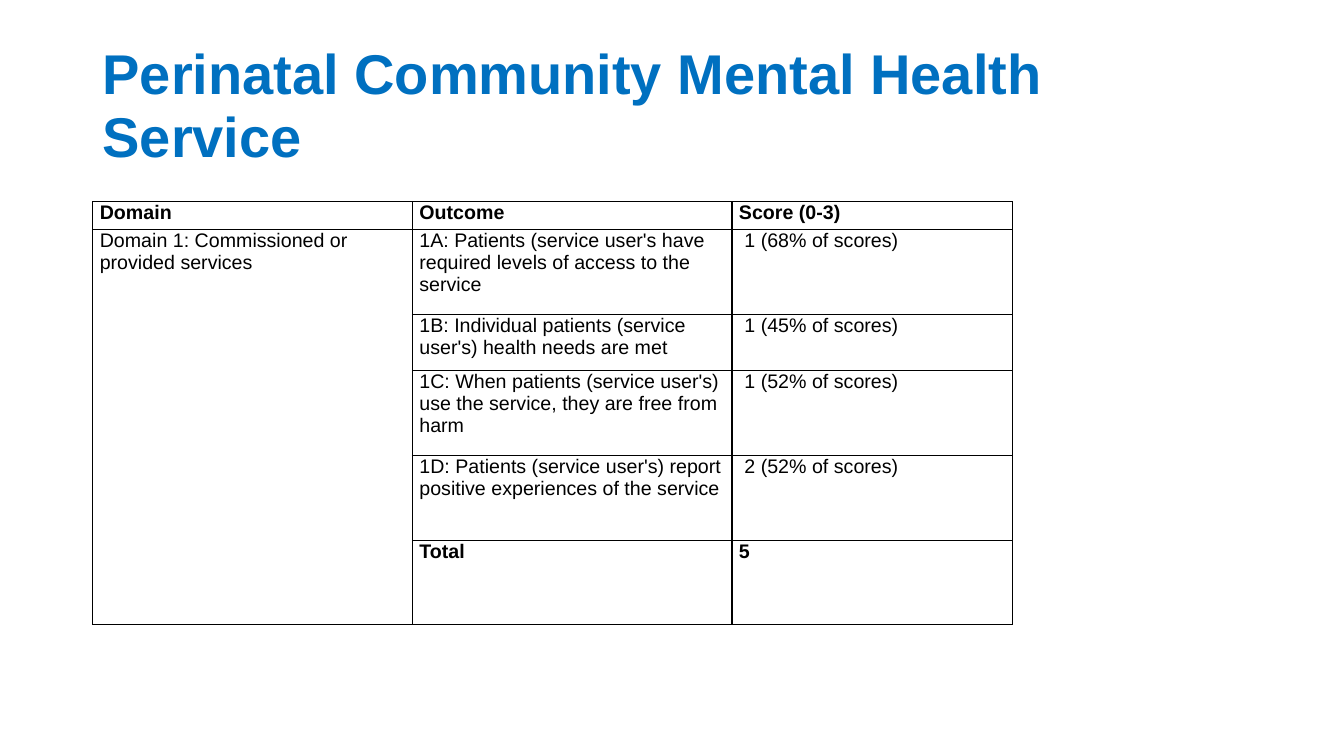
import pptx
import pptx.dml.color
import pptx.enum.text
import pptx.oxml
import pptx.oxml.ns
import pptx.util
from pptx.util import Inches

COLOURS = {"title": "0070C0", "text": "000000", "border": "000000"}
FONT = "Arial"
COLUMN_WIDTHS = [3.17, 3.17, 2.78]
ROW_HEIGHTS = [0.28, 0.84, 0.56, 0.84, 0.84, 0.84]
ROWS = [
    ["Domain", "Outcome", "Score (0-3)"],
    ["Domain 1: Commissioned or provided services",
     "1A: Patients (service user's have required levels of access to the service",
     " 1 (68% of scores)"],
    ["", "1B: Individual patients (service user's) health needs are met", " 1 (45% of scores)"],
    ["", "1C: When patients (service user's) use the service, they are free from harm",
     " 1 (52% of scores)"],
    ["", "1D: Patients (service user's) report positive experiences of the service",
     " 2 (52% of scores)"],
    ["", "Total", "5"],
]


def format_font(paragraph, size, colour, bold):
    """Format every run of a paragraph."""
    for run in paragraph.runs:
        run.font.name = FONT
        run.font.size = pptx.util.Pt(size)
        run.font.bold = bold
        run.font.color.rgb = pptx.dml.color.RGBColor.from_string(COLOURS[colour])


def add_title(slide, left, top, width, height):
    """Add the slide heading in the given box."""
    shape = slide.shapes.add_textbox(Inches(left), Inches(top), Inches(width), Inches(height))
    text_frame = shape.text_frame
    text_frame.word_wrap = True
    text_frame.vertical_anchor = pptx.enum.text.MSO_ANCHOR.MIDDLE
    text_frame.margin_bottom = Inches(0.17)
    text_frame.text = "Perinatal Community Mental Health Service"
    paragraph = text_frame.paragraphs[0]
    paragraph.line_spacing = 0.93
    format_font(paragraph, 40, "title", True)


def set_borders(cell):
    """Draw a thin line on all four sides of a cell."""
    properties = cell._tc.get_or_add_tcPr()
    for position, side in enumerate(("lnL", "lnR", "lnT", "lnB")):
        line = pptx.oxml.parse_xml(
            f'<a:{side} {pptx.oxml.ns.nsdecls("a")} w="12700"><a:solidFill>'
            f'<a:srgbClr val="{COLOURS["border"]}"/></a:solidFill></a:{side}>')
        properties.insert(position, line)


def add_score_table(slide, left, top):
    """Add the table of outcomes and scores with its corner at the given point."""
    frame = slide.shapes.add_table(
        len(ROWS), len(COLUMN_WIDTHS), Inches(left), Inches(top),
        Inches(sum(COLUMN_WIDTHS)), Inches(sum(ROW_HEIGHTS)))
    table = frame.table
    for column, width in zip(table.columns, COLUMN_WIDTHS):
        column.width = Inches(width)
    for row, height in zip(table.rows, ROW_HEIGHTS):
        row.height = Inches(height)
    for row_index, texts in enumerate(ROWS):
        for column_index, text in enumerate(texts):
            cell = table.cell(row_index, column_index)
            cell.margin_left = cell.margin_right = Inches(0.07)
            cell.margin_top = cell.margin_bottom = 0
            cell.fill.background()
            set_borders(cell)
            cell.text_frame.text = text
            bold = row_index in (0, len(ROWS) - 1)
            format_font(cell.text_frame.paragraphs[0], 14, "text", bold)
    table.cell(1, 0).merge(table.cell(len(ROWS) - 1, 0))


def main():
    """Build the slide and save it."""
    presentation = pptx.Presentation()
    presentation.slide_width = Inches(13.33)
    presentation.slide_height = Inches(7.5)
    slide = presentation.slides.add_slide(presentation.slide_layouts[6])
    add_title(slide, 0.92, 0.4, 11.3, 1.45)
    add_score_table(slide, 0.92, 2)
    presentation.save("out.pptx")


if __name__ == "__main__":
    main()
